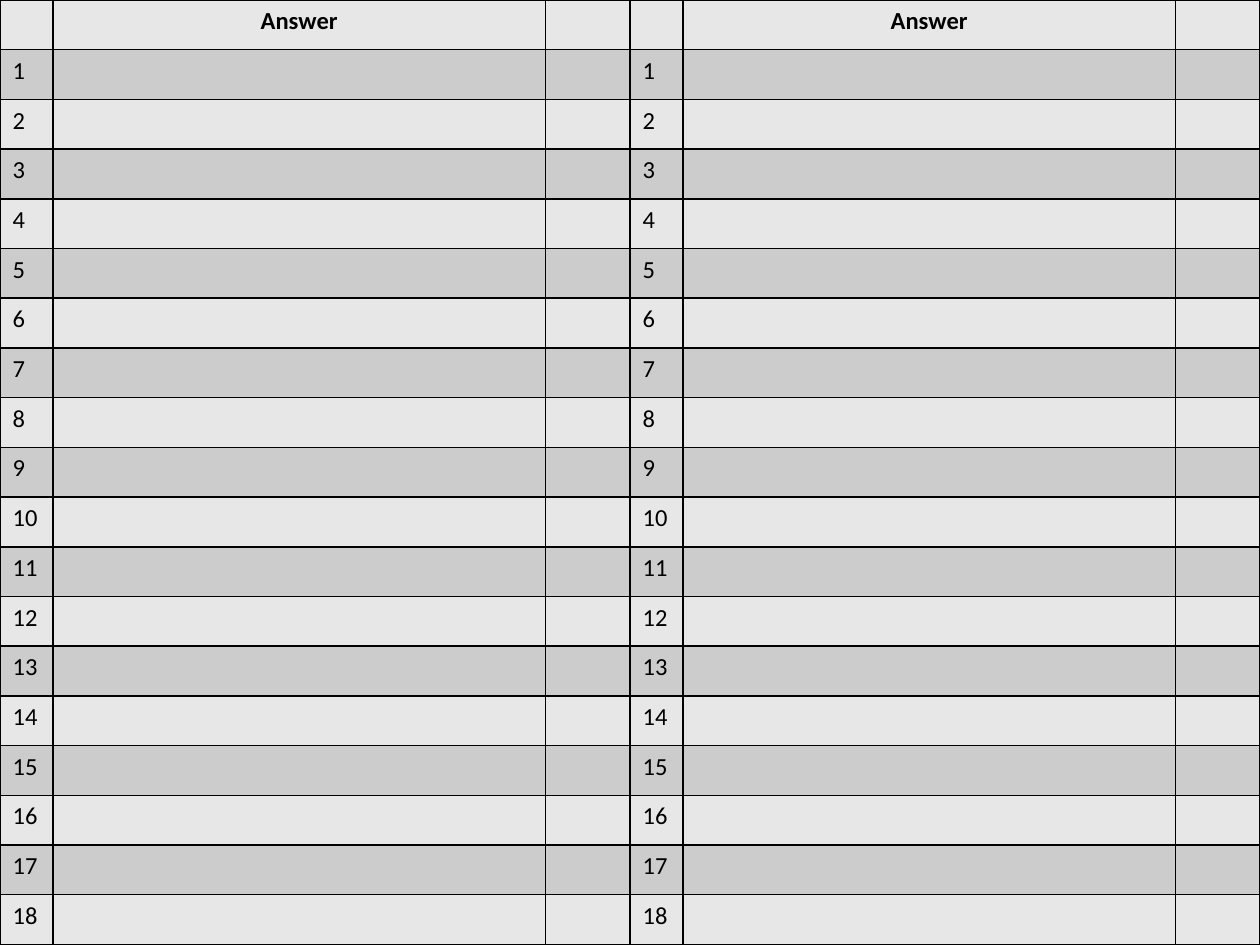
import pptx
import pptx.dml.color
import pptx.enum.text
import pptx.oxml.ns
import pptx.util
from lxml import etree
from pptx.util import Inches

QUESTIONS = 18
ROWS = QUESTIONS + 1
SHEET_WIDTH, SHEET_HEIGHT = 5, 7.5
COLUMN_WIDTHS = (0.42, 3.91, 0.67)
LIGHT, DARK, BLACK = "E7E7E7", "CCCCCC", "000000"


def color(hex_string):
    return pptx.dml.color.RGBColor.from_string(hex_string)


def write_cell(cell, text, fill, bold=False, align=None, size=14):
    """Fill a cell, rule its four edges and write its text."""
    qn = pptx.oxml.ns.qn
    properties = cell._tc.get_or_add_tcPr()
    for edge in ("lnL", "lnR", "lnT", "lnB"):
        line = etree.SubElement(properties, qn(f"a:{edge}"), w=str(pptx.util.Pt(1)))
        solid = etree.SubElement(line, qn("a:solidFill"))
        etree.SubElement(solid, qn("a:srgbClr"), val=BLACK)
    cell.fill.solid()
    cell.fill.fore_color.rgb = color(fill)

    paragraph = cell.text_frame.paragraphs[0]
    paragraph.alignment = align
    if text:
        run = paragraph.add_run()
        run.text = text
        run.font.name = "Calibri"
        run.font.size = pptx.util.Pt(size)
        run.font.bold = bold
        run.font.color.rgb = color(BLACK)
    else:
        # Keep the empty line small enough for the row height
        etree.SubElement(paragraph._p, qn("a:endParaRPr"), sz=str(size * 100))


presentation = pptx.Presentation()
presentation.slide_width = Inches(2 * SHEET_WIDTH)
presentation.slide_height = Inches(SHEET_HEIGHT)
slide = presentation.slides.add_slide(presentation.slide_layouts[6])

# Two identical answer sheets side by side
for left in (0, SHEET_WIDTH):
    answer_sheet = slide.shapes.add_table(
        ROWS, len(COLUMN_WIDTHS), Inches(left), Inches(0),
        Inches(SHEET_WIDTH), Inches(SHEET_HEIGHT)).table
    for column, width in zip(answer_sheet.columns, COLUMN_WIDTHS):
        column.width = Inches(width)

    # Heading row, then numbered rows in alternating greys
    for number, row in enumerate(answer_sheet.rows):
        row.height = Inches(SHEET_HEIGHT / ROWS)
        heading = number == 0
        texts = ("", "Answer", "") if heading else (str(number), "", "")
        for cell, text in zip(row.cells, texts):
            write_cell(cell, text, DARK if number % 2 else LIGHT, bold=heading,
                       align=pptx.enum.text.PP_ALIGN.CENTER if heading else None)

presentation.save("out.pptx")
